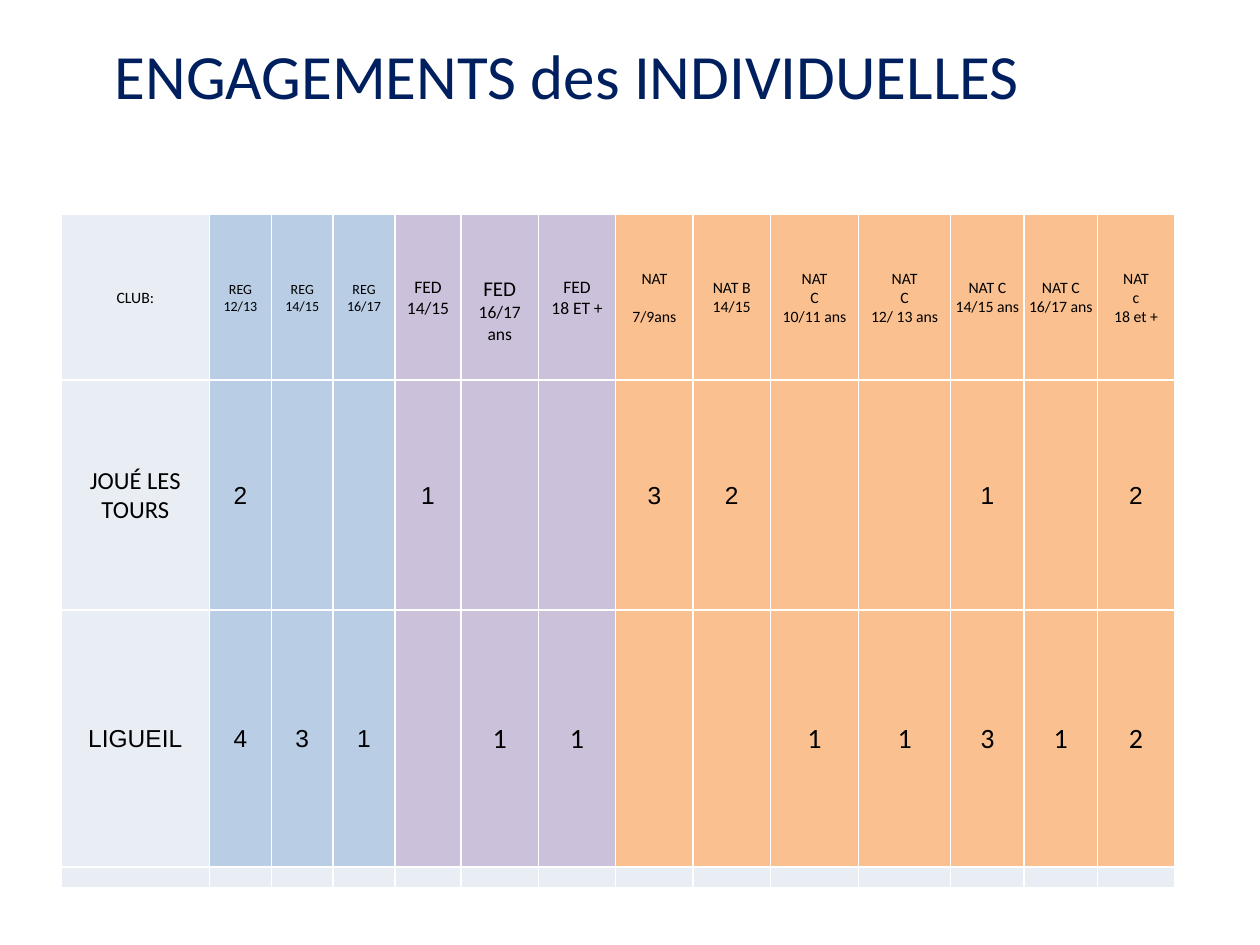
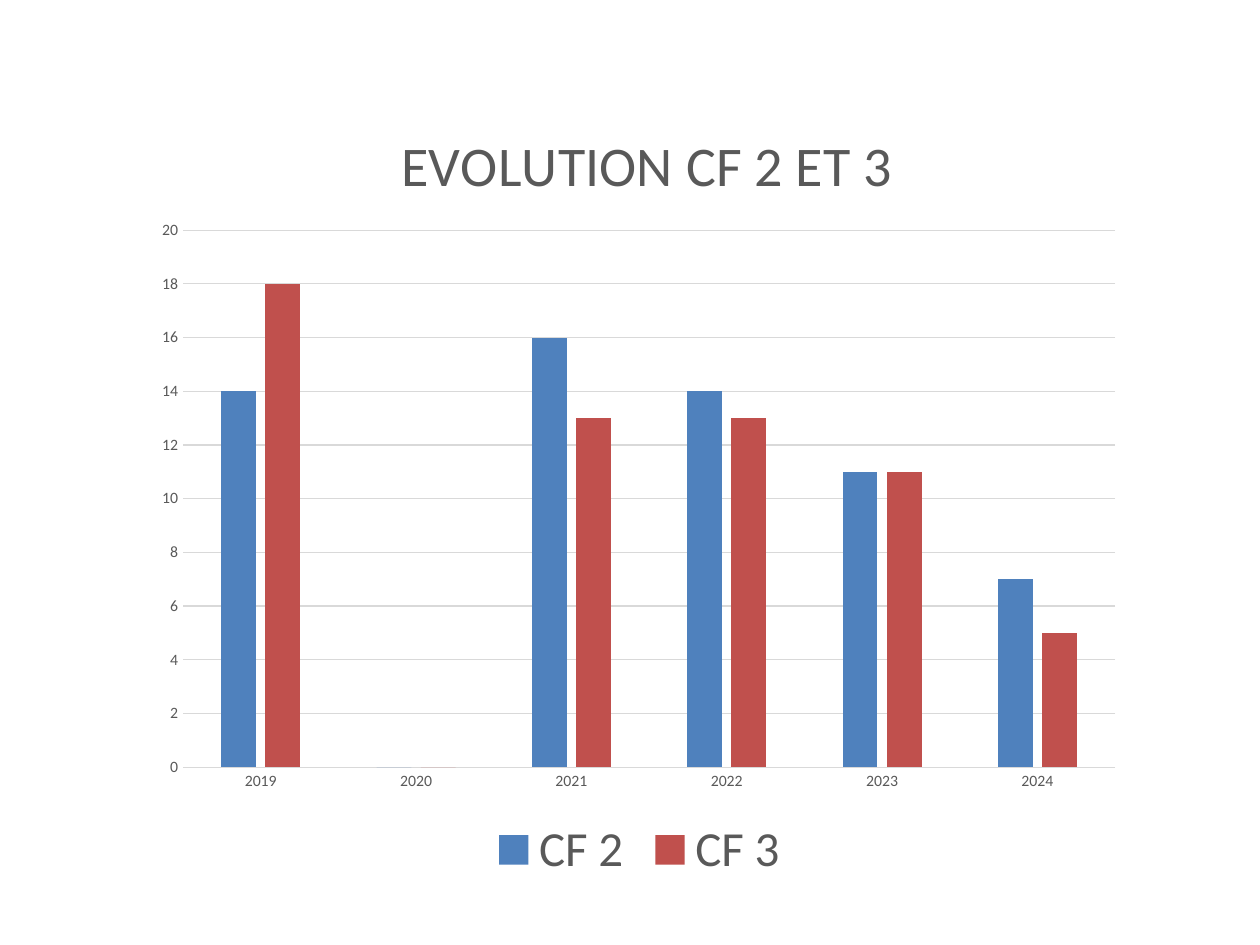
from lxml import etree
from pptx import Presentation
from pptx.chart.data import CategoryChartData
from pptx.dml.color import RGBColor
from pptx.enum.chart import XL_CHART_TYPE, XL_LEGEND_POSITION, XL_TICK_MARK
from pptx.enum.text import MSO_ANCHOR, PP_ALIGN
from pptx.oxml import parse_xml
from pptx.oxml.ns import nsdecls, qn
from pptx.util import Pt

CENTER, MIDDLE = PP_ALIGN.CENTER, MSO_ANCHOR.MIDDLE
COLUMNS, BOTTOM, NO_TICK = (XL_CHART_TYPE.COLUMN_CLUSTERED,
                            XL_LEGEND_POSITION.BOTTOM, XL_TICK_MARK.NONE)
COLORS = {"title": "001F5F", "text": "000000", "border": "FFFFFF",
          "plain": "E9EDF4", "reg": "B9CDE5", "fed": "CCC1DA", "nat": "FAC090",
          "chart_text": "595959", "grid": "D9D9D9",
          "CF 2": "4F81BD", "CF 3": "C0504D"}


def set_font(font, size, color, name="Calibri"):
    font.size = Pt(size)
    font.name = name
    font.bold = False
    font.color.rgb = RGBColor.from_string(COLORS[color])


def place(parent, x, y, w=None, h=None):
    """Give a chart title or plot area a fixed place, in fractions of the chart."""
    parts = {"xMode": "edge", "yMode": "edge", "x": x, "y": y, "w": w, "h": h}
    target = '<c:layoutTarget val="inner"/>' if w else ""
    xml = "".join(f'<c:{k} val="{v}"/>' for k, v in parts.items() if v is not None)
    layout = parse_xml(f'<c:layout {nsdecls("c")}><c:manualLayout>{target}{xml}'
                       '</c:manualLayout></c:layout>')
    old = parent.find(qn("c:layout"))
    if old is not None:
        parent.remove(old)
    tx = parent.find(qn("c:tx"))
    parent.insert(0 if tx is None else 1, layout)


prs = Presentation()
prs.slide_width, prs.slide_height = Pt(720), Pt(540)
blank = prs.slide_layouts[6]

# Slide 1: entries by club
s = prs.slides.add_slide(blank)

# group, width, text size, header lines
columns = [
    ("plain", 85, 9, ["CLUB:"]),
    ("reg", 35.3, 8, ["REG", "12/13"]),
    ("reg", 35.3, 8, ["REG", "14/15"]),
    ("reg", 35.3, 8, ["REG", "16/17"]),
    ("fed", 37.8, 10, ["FED", "14/15"]),
    ("fed", 44.2, 10, ["FED", "16/17", "ans"]),
    ("fed", 44.2, 10, ["FED", "18 ET +"]),
    ("nat", 44.2, 9, ["NAT", "7/9ans"]),
    ("nat", 44.2, 9, ["NAT B 14/15"]),
    ("nat", 50.4, 9, ["NAT", "C", "10/11 ans"]),
    ("nat", 52.6, 9, ["NAT", "C", "12/ 13 ans"]),
    ("nat", 42, 9, ["NAT C", "14/15 ans"]),
    ("nat", 42, 9, ["NAT C", "16/17 ans"]),
    ("nat", 44, 9, ["NAT", "c", "18 et +"]),
]
rows = [
    [lines for *_, lines in columns],
    [[v] for v in ["JOUÉ LES TOURS", "2", "", "", "1", "", "", "3", "2", "", "", "1", "", "2"]],
    [[v] for v in ["LIGUEIL", "4", "3", "1", "", "1", "1", "", "", "1", "1", "3", "1", "2"]],
    [[""] for _ in columns],
]
row_heights = [94.6, 131.4, 147, 11.8]
FED_16, NAT_7 = 5, 7

table = s.shapes.add_table(len(rows), len(columns), Pt(34.8), Pt(122.6),
                           Pt(sum(c[1] for c in columns)), Pt(sum(row_heights))).table
table.first_row = table.horz_banding = False
for column, (_, width, *_) in zip(table.columns, columns):
    column.width = Pt(width)

for i, (height, row) in enumerate(zip(row_heights, rows)):
    table.rows[i].height = Pt(height)
    for j, lines in enumerate(row):
        group, _, header_size, _ = columns[j]
        if i == 0:
            size, name = header_size, "Calibri"
        elif i == 1:
            size, name = 14, "Arial" if j else "Calibri"
        else:
            size, name = (14, "Arial") if j < 4 else (16, "Calibri")

        cell = table.cell(i, j)
        cell.vertical_anchor = MIDDLE
        cell.margin_left = cell.margin_right = cell.margin_top = Pt(0.7)
        cell.margin_bottom = 0
        tf = cell.text_frame
        tf.text = "\n".join(lines)
        for p in tf.paragraphs:
            p.alignment = CENTER
            if p.text:
                set_font(p.font, size, "text", name)
            else:
                etree.SubElement(p._p, qn("a:endParaRPr"), sz="800")

        tc_pr = cell._tc.get_or_add_tcPr()
        for side in ("lnL", "lnR", "lnT", "lnB"):
            tc_pr.append(parse_xml(
                f'<a:{side} {nsdecls("a")} w="12700"><a:solidFill>'
                f'<a:srgbClr val="{COLORS["border"]}"/></a:solidFill></a:{side}>'))
        cell.fill.solid()
        fill = "plain" if i == len(rows) - 1 else group
        cell.fill.fore_color.rgb = RGBColor.from_string(COLORS[fill])

fed_16 = table.cell(0, FED_16)
fed_16.margin_top = Pt(15.4)
fed_16.text_frame.paragraphs[0].font.size = Pt(12)
table.cell(0, NAT_7).text_frame.paragraphs[1].space_before = Pt(11)

tf = s.shapes.add_textbox(Pt(65.5), Pt(21), Pt(574), Pt(118)).text_frame
tf.word_wrap = True
tf.margin_left = tf.margin_right = tf.margin_top = tf.margin_bottom = 0
p = tf.paragraphs[0]
p.text = "ENGAGEMENTS des INDIVIDUELLES"
set_font(p.font, 36, "title")

# Slide 2: evolution by year
s = prs.slides.add_slide(blank)
data = CategoryChartData()
data.categories = ["2019", "2020", "2021", "2022", "2023", "2024"]
data.add_series("CF 2", [14, 0, 16, 14, 11, 7])
data.add_series("CF 3", [18, 0, 13, 13, 11, 5])
chart = s.shapes.add_chart(COLUMNS, Pt(82), Pt(43.2), Pt(566.6), Pt(465), data).chart
set_font(chart.font, 10, "text")

chart.has_title = True
p = chart.chart_title.text_frame.paragraphs[0]
p.text = "EVOLUTION CF 2 ET 3"
set_font(p.font, 32, "chart_text")
place(chart.chart_title._element, 0.25, 0.05)
place(chart._chartSpace.chart.plotArea, 0.04, 0.19, 0.94, 0.66)

chart.has_legend = True
chart.legend.position = BOTTOM
chart.legend.include_in_layout = False
set_font(chart.legend.font, 28, "chart_text")

plot = chart.plots[0]
plot.gap_width, plot.overlap, plot.vary_by_categories = 219, -27, False
for series in plot.series:
    series.format.fill.solid()
    series.format.fill.fore_color.rgb = RGBColor.from_string(COLORS[series.name])

years, counts = chart.category_axis, chart.value_axis
for axis in (years, counts):
    axis.major_tick_mark = axis.minor_tick_mark = NO_TICK
    set_font(axis.tick_labels.font, 9, "chart_text")
counts.minimum_scale, counts.maximum_scale, counts.major_unit = 0, 20, 2
counts.format.line.fill.background()
for line in (years.format.line, counts.major_gridlines.format.line):
    line.width = Pt(0.75)
    line.color.rgb = RGBColor.from_string(COLORS["grid"])

prs.save("out.pptx")
